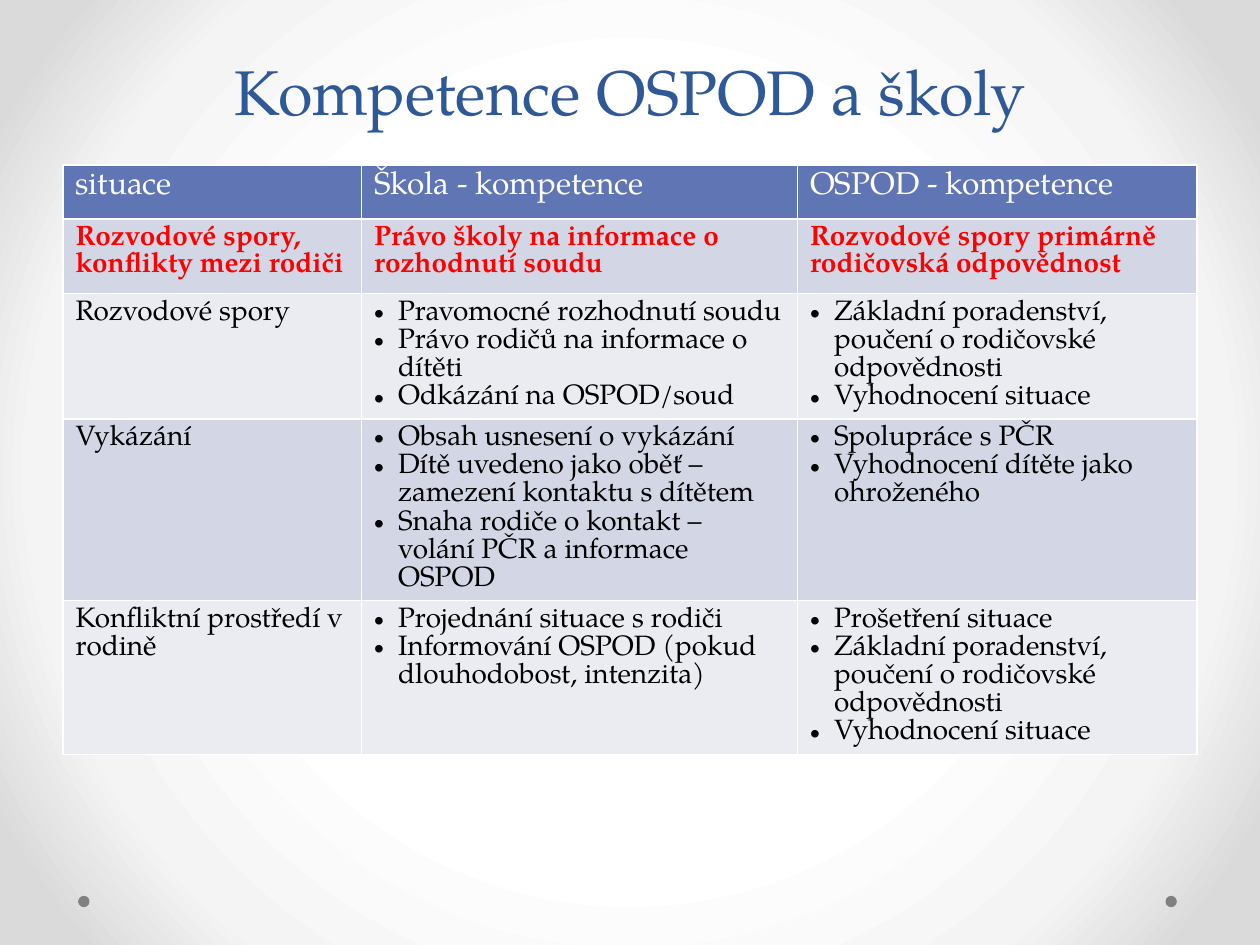
"""Build a slide comparing the competences of school and OSPOD."""
from pptx import Presentation
from pptx.dml.color import RGBColor
from pptx.enum.shapes import MSO_SHAPE
from pptx.enum.text import MSO_ANCHOR, MSO_AUTO_SIZE, PP_ALIGN
from pptx.oxml import parse_xml
from pptx.oxml.ns import nsdecls
from pptx.util import Inches, Pt

HEAD = ["situace", "Škola - kompetence", "OSPOD - kompetence"]
TOPIC = [
    "Rozvodové spory, konflikty mezi rodiči",
    "Právo školy na informace o rozhodnutí soudu",
    "Rozvodové spory primárně rodičovská odpovědnost",
]
ADVICE = "Základní poradenství, poučení o rodičovské odpovědnosti"
REVIEW = "Vyhodnocení situace"
CASES = [
    ["Rozvodové spory",
     ["Pravomocné rozhodnutí soudu",
      "Právo rodičů na informace o dítěti",
      "Odkázání na OSPOD/soud"],
     [ADVICE, REVIEW]],
    ["Vykázání",
     ["Obsah usnesení o vykázání",
      "Dítě uvedeno jako oběť – zamezení kontaktu s dítětem",
      "Snaha rodiče o kontakt – volání PČR a informace OSPOD"],
     ["Spolupráce s PČR", "Vyhodnocení dítěte jako ohroženého"]],
    ["Konfliktní prostředí v rodině",
     ["Projednání situace s rodiči",
      "Informování OSPOD (pokud dlouhodobost, intenzita)"],
     ["Prošetření situace", ADVICE, REVIEW]],
]
WIDTHS = [2.37, 3.46, 3.17]
HEIGHTS = [0.43, 0.59, 0.99, 1.22, 1.22]
BANDS = ["D2D6E5", "EAECF2"]


def paint(code):
    return RGBColor.from_string(code)


def apply(item, form):
    for name, value in form.items():
        setattr(item, name, value)


class Deck:
    face = "TeX Gyre Pagella"
    head = {"size": Pt(18), "bold": False}
    topic = {"size": Pt(16), "bold": True}
    plain = {"size": Pt(16), "bold": False}

    def __init__(self):
        self.file = Presentation()
        apply(self.file, {"slide_width": Inches(10), "slide_height": Inches(7.5)})
        self.slide = self.file.slides.add_slide(self.file.slide_layouts[5])

    def back(self, stops):
        marks = "".join(
            f'<a:gs pos="{spot * 1000}"><a:srgbClr val="{code}"/></a:gs>'
            for spot, code in stops)
        self.slide.element.cSld.insert(0, parse_xml(
            f'<p:bg {nsdecls("p", "a")}><p:bgPr><a:gradFill rotWithShape="1">'
            f'<a:gsLst>{marks}</a:gsLst><a:path path="circle">'
            '<a:fillToRect l="50000" t="50000" r="50000" b="50000"/></a:path>'
            '</a:gradFill><a:effectLst/></p:bgPr></p:bg>'))

    def font(self, part, form, code):
        apply(part.font, {"name": self.face, **form})
        part.font.color.rgb = paint(code)

    def dot(self, left, top, size, code):
        dot = self.slide.shapes.add_shape(
            MSO_SHAPE.OVAL, Inches(left), Inches(top), Inches(size), Inches(size))
        dot.shadow.inherit = False
        dot.fill.solid()
        dot.fill.fore_color.rgb = paint(code)
        dot.line.fill.background()

    def title(self, text, code):
        title = self.slide.shapes.title
        apply(title, {"left": Inches(0.5), "top": Inches(0),
                      "width": Inches(9), "height": Inches(1.07)})
        frame = title.text_frame
        apply(frame, {"text": text, "word_wrap": True,
                      "auto_size": MSO_AUTO_SIZE.NONE,
                      "vertical_anchor": MSO_ANCHOR.BOTTOM})
        para = frame.paragraphs[0]
        apply(para, {"alignment": PP_ALIGN.CENTER, "line_spacing": Pt(58)})
        self.font(para.runs[0], {"size": Pt(36)}, code)

    def bullet(self, para):
        props = para._p.get_or_add_pPr()
        props.set("marL", str(Inches(0.19)))
        props.set("indent", str(Inches(-0.19)))
        props.append(parse_xml(f'<a:buFont {nsdecls("a")} typeface="Arial"/>'))
        props.append(parse_xml(f'<a:buChar {nsdecls("a")} char="•"/>'))

    def cell(self, cell, text, form, code, fill):
        listed = isinstance(text, list)
        cell.text = "\n".join(text) if listed else text
        for para in cell.text_frame.paragraphs:
            if listed:
                self.bullet(para)
            self.font(para.runs[0], form, code)
        props = cell._tc.get_or_add_tcPr()
        for side in "LRTB":
            props.append(parse_xml(
                f'<a:ln{side} {nsdecls("a")} w="{Pt(1)}"><a:solidFill>'
                f'<a:srgbClr val="FFFFFF"/></a:solidFill></a:ln{side}>'))
        cell.fill.solid()
        cell.fill.fore_color.rgb = paint(fill)

    def table(self, left, top, rows):
        table = self.slide.shapes.add_table(
            len(rows), len(WIDTHS), Inches(left), Inches(top),
            Inches(sum(WIDTHS)), Inches(sum(HEIGHTS))).table
        for col, width in zip(table.columns, WIDTHS):
            col.width = Inches(width)
        for row, height, (texts, *style) in zip(table.rows, HEIGHTS, rows):
            row.height = Inches(height)
            for cell, text in zip(row.cells, texts):
                self.cell(cell, text, *style)


def main():
    deck = Deck()
    deck.back([(50, "FFFFFF"), (76, "F4F4F4"), (92, "DADADA")])
    for left in (9.25, 0.62):
        deck.dot(left, 7.11, 0.09, "808080")
    deck.title("Kompetence OSPOD a školy", "2F5897")
    rows = [(HEAD, deck.head, "FFFFFF", "6076B4"),
            (TOPIC, deck.topic, "FF0000", BANDS[0])]
    rows += [(case, deck.plain, "000000", BANDS[(num + 1) % 2])
             for num, case in enumerate(CASES)]
    deck.table(0.5, 1.31, rows)
    deck.file.save("out.pptx")


if __name__ == "__main__":
    main()
